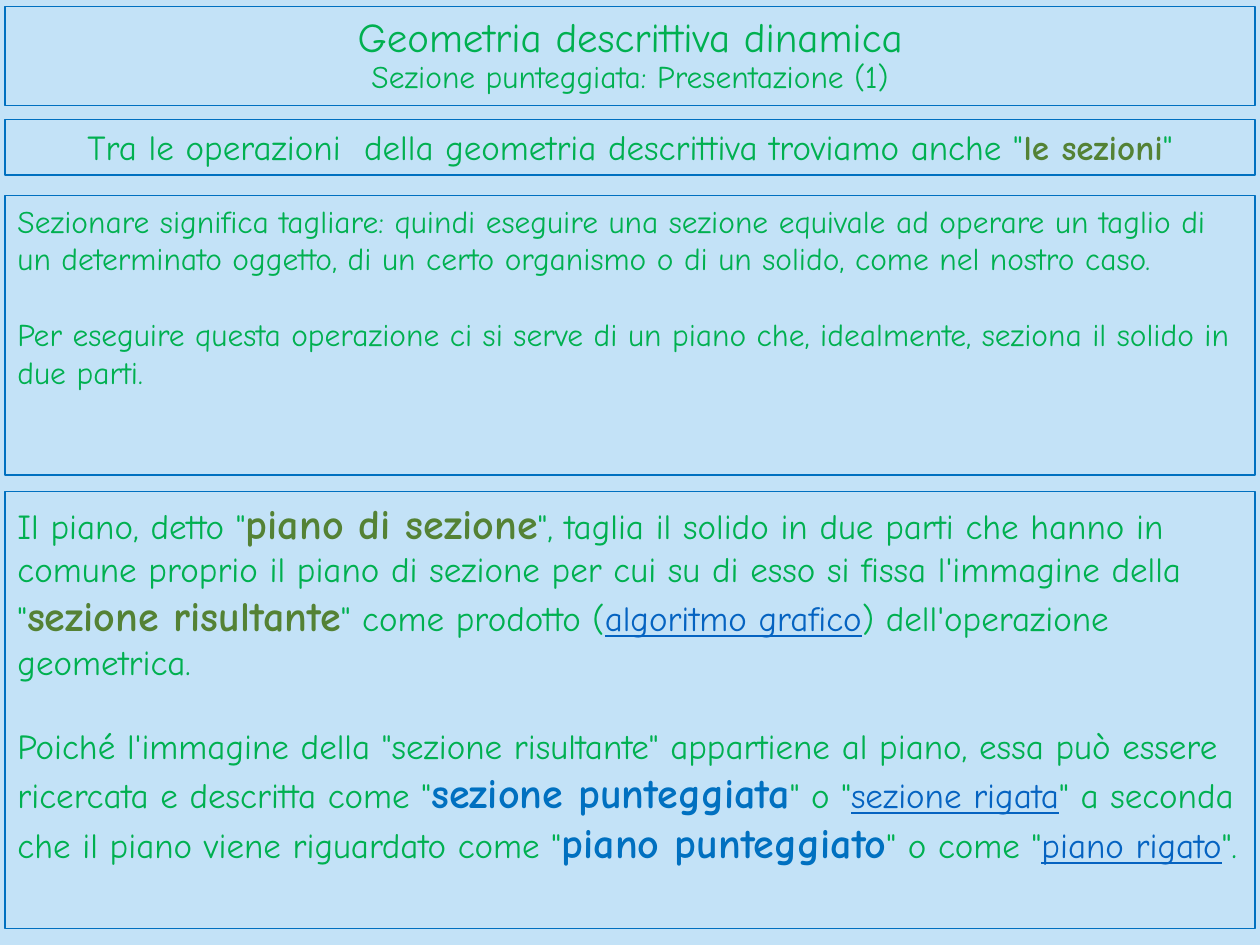
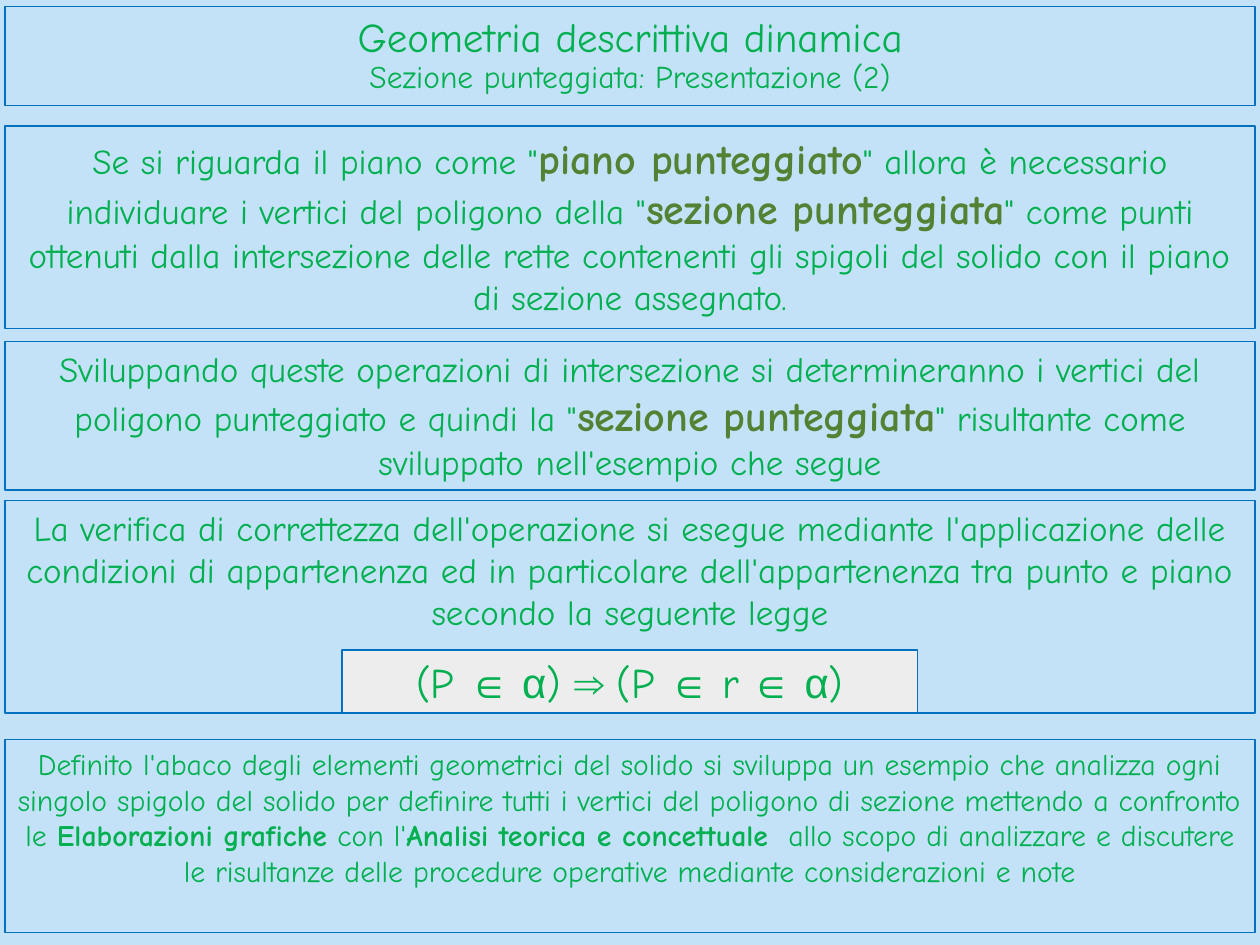
from dataclasses import dataclass

import pptx
import pptx.dml.color
import pptx.enum.text
import pptx.util

Inches = pptx.util.Inches
ALIGN = pptx.enum.text.PP_ALIGN
ANCHOR = pptx.enum.text.MSO_ANCHOR


@dataclass(frozen=True)
class Theme:
    background: str = "C3E2F7"
    border: str = "0070C0"
    body: str = "00B050"
    term: str = "548235"
    dotted: str = "0070C0"
    link: str = "0563C1"
    formula_fill: str = "EDEDED"
    font: str = "Comic Neue"
    symbol_font: str = "Arial"
    title_size: float = 23.4
    large: float = 24
    medium: float = 20
    small: float = 18
    note: float = 17
    border_width: float = 0.75
    line_height: float = 1.2


THEME = Theme()
LEFT, WIDTH = 0.04, 9.92

# Run styles: the font settings that differ from the paragraph.
BOLD = {"bold": True}
TERM = {"bold": True, "color": THEME.term}
KEY_TERM = {**TERM, "size": THEME.large}
DOTTED_TERM = {**KEY_TERM, "color": THEME.dotted}
LINK = {"underline": True, "color": THEME.link}
SYMBOL = {"name": THEME.symbol_font}


def rgb(color):
    return pptx.dml.color.RGBColor.from_string(color)


def style_font(font, name=None, size=None, color=None, bold=None, underline=None):
    if name:
        font.name = name
    if size:
        font.size = pptx.util.Pt(size)
    if color:
        font.color.rgb = rgb(color)
    if bold is not None:
        font.bold = bold
    if underline is not None:
        font.underline = underline


def write_paragraph(paragraph, pieces, size, align):
    """Write pieces, each a plain string or a (string, run style) pair."""
    paragraph.alignment = align
    style_font(paragraph.font, THEME.font, size, THEME.body)
    for piece in pieces:
        text, style = (piece, {}) if isinstance(piece, str) else piece
        run = paragraph.add_run()
        run.text = text
        style_font(run.font, **style)


def add_panel(slide, box, paragraphs, size, align=ALIGN.CENTER,
              anchor=ANCHOR.TOP, fill=None):
    """Add a bordered panel whose paragraphs stand one blank line apart."""
    panel = slide.shapes.add_textbox(*map(Inches, box))
    panel.line.color.rgb = rgb(THEME.border)
    panel.line.width = pptx.util.Pt(THEME.border_width)
    if fill:
        panel.fill.solid()
        panel.fill.fore_color.rgb = rgb(fill)
    frame = panel.text_frame
    frame.word_wrap = True
    frame.vertical_anchor = anchor
    for index, pieces in enumerate(paragraphs):
        paragraph = frame.add_paragraph() if index else frame.paragraphs[0]
        write_paragraph(paragraph, pieces, size, align)
        if index:
            paragraph.space_before = pptx.util.Pt(size * THEME.line_height)
    return panel


def add_title(slide, number):
    title = add_panel(slide, (LEFT, 0.05, WIDTH, 0.79),
                      [["Geometria descrittiva dinamica"]],
                      THEME.title_size, anchor=ANCHOR.MIDDLE)
    subtitle = title.text_frame.add_paragraph()
    write_paragraph(subtitle, [f"Sezione punteggiata: Presentazione ({number})"],
                    THEME.small, ALIGN.CENTER)
    for paragraph in title.text_frame.paragraphs:
        paragraph.line_spacing = 0.9


def add_titled_slide(deck, number):
    slide = deck.slides.add_slide(deck.slide_layouts[6])
    slide.background.fill.solid()
    slide.background.fill.fore_color.rgb = rgb(THEME.background)
    add_title(slide, number)
    return slide


def add_law(slide, box):
    """Add the verification panel with the law of belonging at its foot."""
    left, top, width, height = box
    add_panel(slide, box, [[
        "La verifica di correttezza dell'operazione si esegue mediante "
        "l'applicazione delle condizioni di appartenenza ed in particolare "
        "dell'appartenenza tra punto e piano secondo la seguente legge",
    ]], THEME.medium)
    law_width, law_height = 4.57, 0.5
    law_box = (left + (width - law_width) / 2, top + height - law_height,
               law_width, law_height)
    add_panel(slide, law_box, [[
        "(P ", ("∈ α", SYMBOL), ") ", ("⇒ ", SYMBOL), "(P ", ("∈ ", SYMBOL),
        "r", (" ∈ α", SYMBOL), ")",
    ]], THEME.large, anchor=ANCHOR.MIDDLE, fill=THEME.formula_fill)


def build_sections_slide(deck):
    slide = add_titled_slide(deck, 1)
    add_panel(slide, (LEFT, 0.95, WIDTH, 0.44), [[
        "Tra le operazioni  della geometria descrittiva troviamo anche \"",
        ("le sezioni", TERM), "\"",
    ]], THEME.medium)
    add_panel(slide, (LEFT, 1.55, WIDTH, 2.22), [
        ["Sezionare significa tagliare: quindi eseguire una sezione equivale ad "
         "operare un taglio di un determinato oggetto, di un certo organismo o "
         "di un solido, come nel nostro caso."],
        ["Per eseguire questa operazione ci si serve di un piano che, "
         "idealmente, seziona il solido in due parti."],
    ], THEME.small, ALIGN.LEFT)
    add_panel(slide, (LEFT, 3.9, WIDTH, 3.47), [
        ["Il piano, detto \"", ("piano di sezione", KEY_TERM),
         "\", taglia il solido in due parti che hanno in comune proprio il piano "
         "di sezione per cui su di esso si fissa l'immagine della \"",
         ("sezione risultante", KEY_TERM), "\" come prodotto (",
         ("algoritmo grafico", LINK), ") dell'operazione geometrica."],
        ["Poiché l'immagine della \"sezione risultante\" appartiene al piano, "
         "essa può essere ricercata e descritta come \"",
         ("sezione punteggiata", DOTTED_TERM), "\" o \"",
         ("sezione rigata", LINK),
         "\" a seconda che il piano viene riguardato come \"",
         ("piano punteggiato", DOTTED_TERM), "\" o come \"",
         ("piano rigato", LINK), "\"."],
    ], THEME.medium, ALIGN.LEFT)


def build_dotted_plane_slide(deck):
    slide = add_titled_slide(deck, 2)
    add_panel(slide, (LEFT, 1, WIDTH, 1.61), [[
        "Se si riguarda il piano come \"", ("piano punteggiato", KEY_TERM),
        "\" allora è necessario individuare i vertici del poligono della \"",
        ("sezione punteggiata", KEY_TERM),
        "\" come punti ottenuti dalla intersezione delle rette contenenti gli "
        "spigoli del solido con il piano di sezione assegnato.",
    ]], THEME.medium)
    add_panel(slide, (LEFT, 2.71, WIDTH, 1.18), [[
        "Sviluppando queste operazioni di intersezione si determineranno i "
        "vertici del poligono punteggiato e quindi la \"",
        ("sezione punteggiata", KEY_TERM),
        "\" risultante come sviluppato nell'esempio che segue",
    ]], THEME.medium)
    add_law(slide, (LEFT, 3.97, WIDTH, 1.69))
    add_panel(slide, (LEFT, 5.87, WIDTH, 1.53), [[
        "Definito l'abaco degli elementi geometrici del solido si sviluppa un "
        "esempio che analizza ogni singolo spigolo del solido per definire tutti "
        "i vertici del poligono di sezione mettendo a confronto le ",
        ("Elaborazioni grafiche", BOLD), " con l'",
        ("Analisi teorica e concettuale", BOLD),
        "  allo scopo di analizzare e discutere le risultanze delle procedure "
        "operative mediante considerazioni e note",
    ]], THEME.note)


def main():
    deck = pptx.Presentation()
    deck.slide_width, deck.slide_height = Inches(10), Inches(7.5)
    build_sections_slide(deck)
    build_dotted_plane_slide(deck)
    deck.save("out.pptx")


if __name__ == "__main__":
    main()
